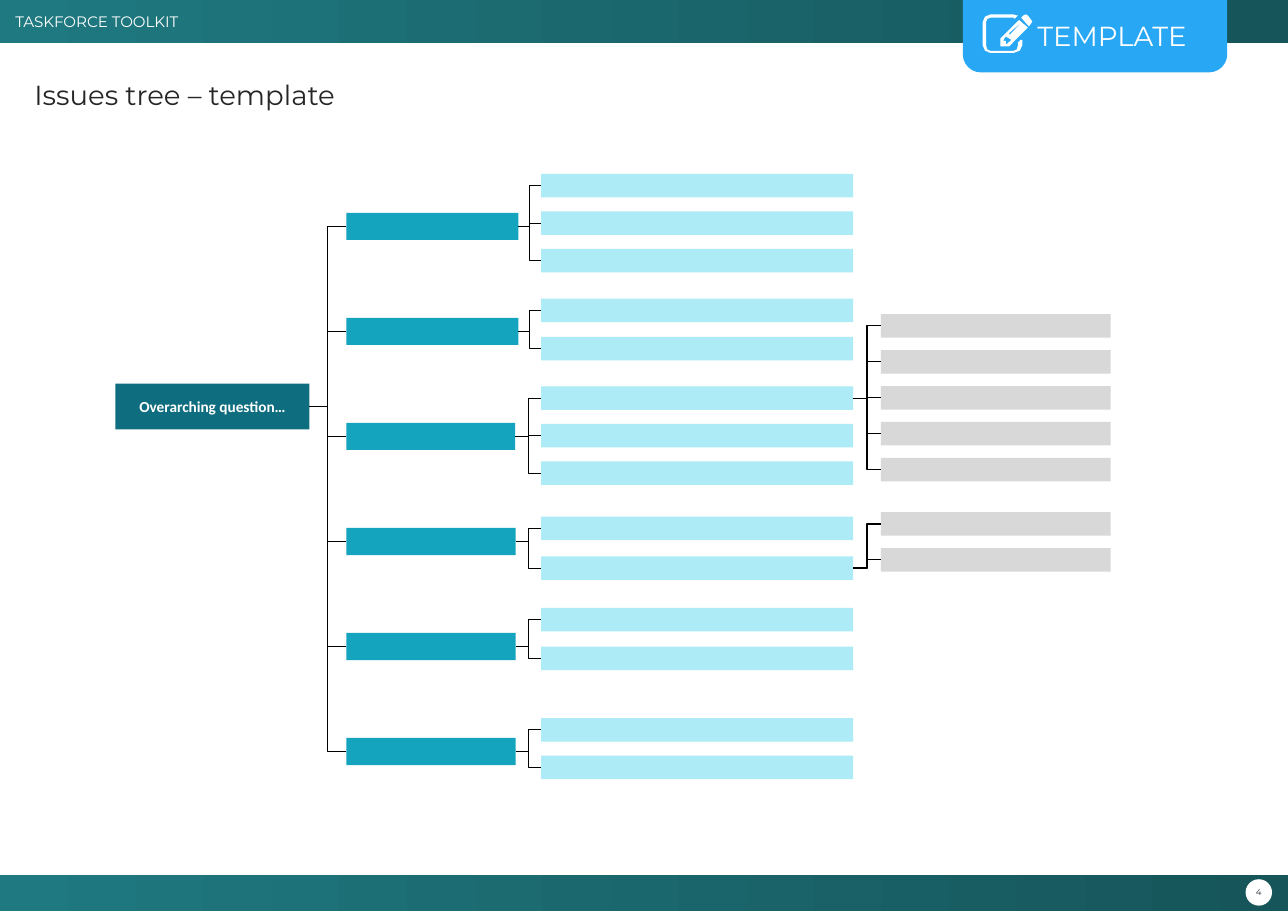
from dataclasses import dataclass
from typing import NamedTuple

from lxml.etree import SubElement
from pptx import Presentation
from pptx.dml.color import RGBColor as Rgb
from pptx.enum.shapes import MSO_CONNECTOR as Connector, MSO_SHAPE as Preset
from pptx.enum.text import MSO_ANCHOR as Anchor, PP_ALIGN as Align
from pptx.oxml.ns import qn
from pptx.util import Pt


class Box(NamedTuple):
    """A rectangle in points."""
    left: float
    top: float
    width: float
    height: float

    def inner(self, left, top, width, height):
        """Return a box placed relative to this one."""
        return Box(self.left + left, self.top + top, width, height)

    def lengths(self):
        """Return the four sides as slide lengths."""
        return [Pt(value) for value in self]


@dataclass(frozen=True)
class Theme:
    """Colours, fonts and type sizes of the toolkit."""
    bar_start: str = "1F7980"
    bar_end: str = "16555A"
    tab: str = "28A7F5"
    question: str = "0E6D7E"
    branch: str = "15A4BE"
    leaf: str = "ADEBF6"
    detail: str = "D8D8D9"
    link: str = "000000"
    white: str = "FFFFFF"
    title: str = "262626"
    number: str = "222A35"
    heading_font: str = "Montserrat"
    tree_font: str = "Calibri"
    title_size: float = 18
    header_size: float = 9.9
    question_size: float = 10
    number_size: float = 5.7
    link_width: float = 0.75


THEME = Theme()
PAGE = Box(0, 0, 841.68, 595.44)

BRANCH_WIDTHS = [112.4, 112.4, 110.3, 110.6, 110.6, 110.6]
LEAF_GROUPS = [(0, 24.5, 3), (81.4, 25, 2), (138.9, 24.5, 3),
               (224, 25.9, 2), (283.7, 25.3, 2), (355.7, 24.5, 2)]
DETAIL_GROUPS = [(2, 0, 91.6, 5), (3, 1, 221.1, 2)]

TRAY = [(259, 202), (242, 237), (202, 252), (50, 252), (15, 237), (0, 202),
        (0, 50), (15, 15), (50, 0), (202, 0), (223, 7), (230, 7), (209, 29),
        (202, 22), (50, 22), (30, 30), (22, 50), (22, 202), (30, 229),
        (50, 238), (202, 238), (223, 229), (230, 202), (230, 180),
        (238, 180), (245, 166), (259, 166)]
PENCIL = [(295, 86), (173, 209), (115, 209), (115, 158), (238, 36)]
TIP = [(187, 166), (151, 144), (137, 166), (137, 173), (151, 173),
       (151, 194), (158, 194)]
GROOVE = [(238, 65), (173, 122), (173, 130), (180, 130), (240, 67)]
ERASER = [(302, 79), (252, 22), (266, 7), (281, 0), (295, 7), (317, 36),
          (324, 46), (317, 58)]


def apply(target, **values):
    """Set each format value on the target."""
    for name, value in values.items():
        setattr(target, name, value)


def paint(shape, color):
    """Give a shape a plain fill without line or shadow."""
    shape.shadow.inherit = False
    shape.line.fill.background()
    shape.fill.solid()
    shape.fill.fore_color.rgb = Rgb.from_string(color)


def add_panel(slide, box, color, preset=Preset.RECTANGLE):
    """Add a filled preset shape."""
    panel = slide.shapes.add_shape(preset, *box.lengths())
    paint(panel, color)
    return panel


def write(shape, text, size, color, font=THEME.heading_font, bold=False,
          align=Align.LEFT, anchor=Anchor.MIDDLE, insets=(0, 0, 0, 0), wrap=True):
    """Write one formatted line into a shape and return its paragraph."""
    frame = shape.text_frame
    left, top, right, bottom = map(Pt, insets)
    apply(frame, word_wrap=wrap, vertical_anchor=anchor, margin_left=left,
          margin_top=top, margin_right=right, margin_bottom=bottom)
    line = frame.paragraphs[0]
    line.alignment = align
    run = line.add_run()
    run.text = text
    apply(run.font, name=font, size=Pt(size), bold=bold)
    run.font.color.rgb = Rgb.from_string(color)
    return line


def add_bar(slide, box):
    """Add a gradient bar across the page."""
    bar = add_panel(slide, box, THEME.bar_start)
    bar.fill.gradient()
    bar.fill.gradient_angle = 0
    for stop, color in zip(bar.fill.gradient_stops, (THEME.bar_start, THEME.bar_end)):
        stop.color.rgb = Rgb.from_string(color)
    return bar


def add_header(slide, box):
    """Place the toolkit name in the top bar."""
    write(add_bar(slide, box), "TASKFORCE TOOLKIT", THEME.header_size,
          THEME.white, insets=(10, 4.3, 5, 4.3))


def add_footer(slide, box):
    """Place the bottom bar with its page number."""
    add_bar(slide, box)
    badge = add_panel(slide, box.inner(814, 3, 17.3, 17.3), THEME.white, Preset.OVAL)
    write(badge, "4", THEME.number_size, THEME.number, align=Align.CENTER, wrap=False)


def add_edit_icon(slide, box):
    """Draw the pencil over its tray, in tenths of a point."""
    outline = slide.shapes.build_freeform(*TRAY[0], scale=Pt(0.1))
    outline.add_line_segments(TRAY[1:])
    for contour in (PENCIL, TIP, GROOVE, ERASER):
        outline.move_to(*contour[0])
        outline.add_line_segments(contour[1:])
    paint(outline.convert_to_shape(Pt(box.left), Pt(box.top)), THEME.white)


def add_template_tab(slide, box):
    """Place the tab that hangs from the top edge."""
    tab = add_panel(slide, box, THEME.tab, Preset.ROUND_2_SAME_RECTANGLE)
    tab.adjustments[0], tab.adjustments[1] = 0, 0.25
    write(tab, "TEMPLATE", THEME.title_size, THEME.white,
          align=Align.CENTER, insets=(22.3, 2.9, 0, 0))
    add_edit_icon(slide, box.inner(13, 9.4, 32.4, 25.2))


def add_title(slide, box):
    """Place the slide title."""
    title = slide.shapes.add_textbox(*box.lengths())
    line = write(title, "Issues tree – template", THEME.title_size,
                 THEME.title, anchor=Anchor.TOP)
    line.line_spacing = 1.1


def link(slide, parent, child):
    """Join a parent's right side to a child's left side."""
    elbow = slide.shapes.add_connector(Connector.ELBOW, 0, 0, 0, 0)
    elbow.begin_connect(parent, 3)
    elbow.end_connect(child, 1)
    elbow.line.width = Pt(THEME.link_width)
    elbow.line.color.rgb = Rgb.from_string(THEME.link)
    SubElement(elbow._element.spPr, qn("a:effectLst"))


def add_children(slide, parent, first, pitch, count, color):
    """Stack equal child boxes below the first and link them to the parent."""
    children = []
    for index in range(count):
        child = add_panel(slide, first.inner(0, index * pitch, first.width, first.height), color)
        link(slide, parent, child)
        children.append(child)
    return children


def add_issues_tree(slide, box):
    """Place the question with its branches, leaves and details."""
    question = add_panel(slide, box.inner(0, 137, 126.8, 30), THEME.question)
    write(question, "Overarching question…", THEME.question_size, THEME.white,
          THEME.tree_font, True, Align.CENTER, insets=(9.4, 2.9, 9.4, 2.9))
    leaves = []
    for row, (width, (top, pitch, count)) in enumerate(zip(BRANCH_WIDTHS, LEAF_GROUPS)):
        branch = add_panel(slide, box.inner(151, 25.4 + row * 68.64, width, 17.8), THEME.branch)
        link(slide, question, branch)
        first_leaf = box.inner(278.2, top, 203.9, 15.4)
        leaves.append(add_children(slide, branch, first_leaf, pitch, count, THEME.leaf))
    for group, position, top, count in DETAIL_GROUPS:
        first_detail = box.inner(500.2, top, 150.3, 15.4)
        add_children(slide, leaves[group][position], first_detail, 23.5, count, THEME.detail)


def main():
    """Build and save the slide."""
    deck = Presentation()
    apply(deck, slide_width=Pt(PAGE.width), slide_height=Pt(PAGE.height))
    slide = deck.slides.add_slide(deck.slide_layouts[6])
    add_header(slide, PAGE.inner(0, 0, PAGE.width, 28))
    add_footer(slide, PAGE.inner(0, 571.7, PAGE.width, 23.74))
    add_template_tab(slide, PAGE.inner(629.2, 0, 172.8, 47.3))
    add_title(slide, PAGE.inner(22.5, 49, 562.3, 53.3))
    add_issues_tree(slide, PAGE.inner(75.4, 113.7, 650.5, 395.6))
    deck.save("out.pptx")


if __name__ == "__main__":
    main()
